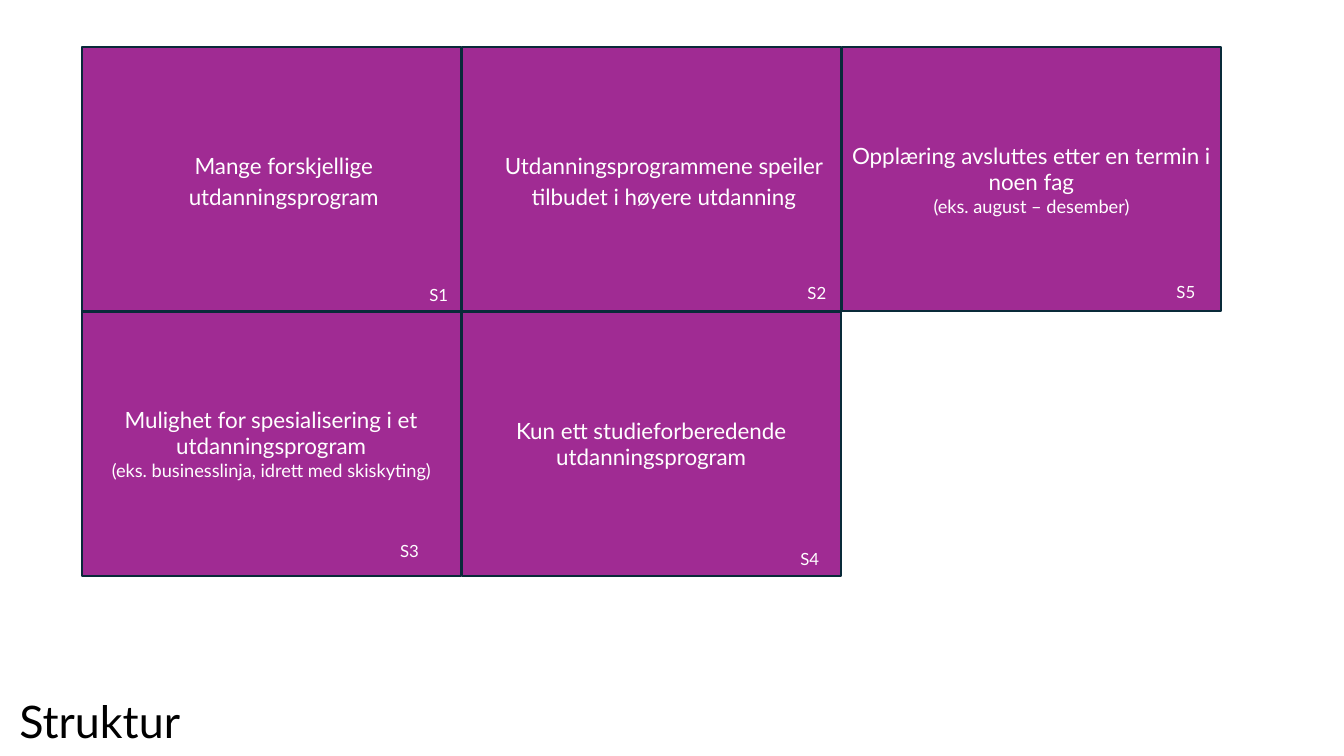
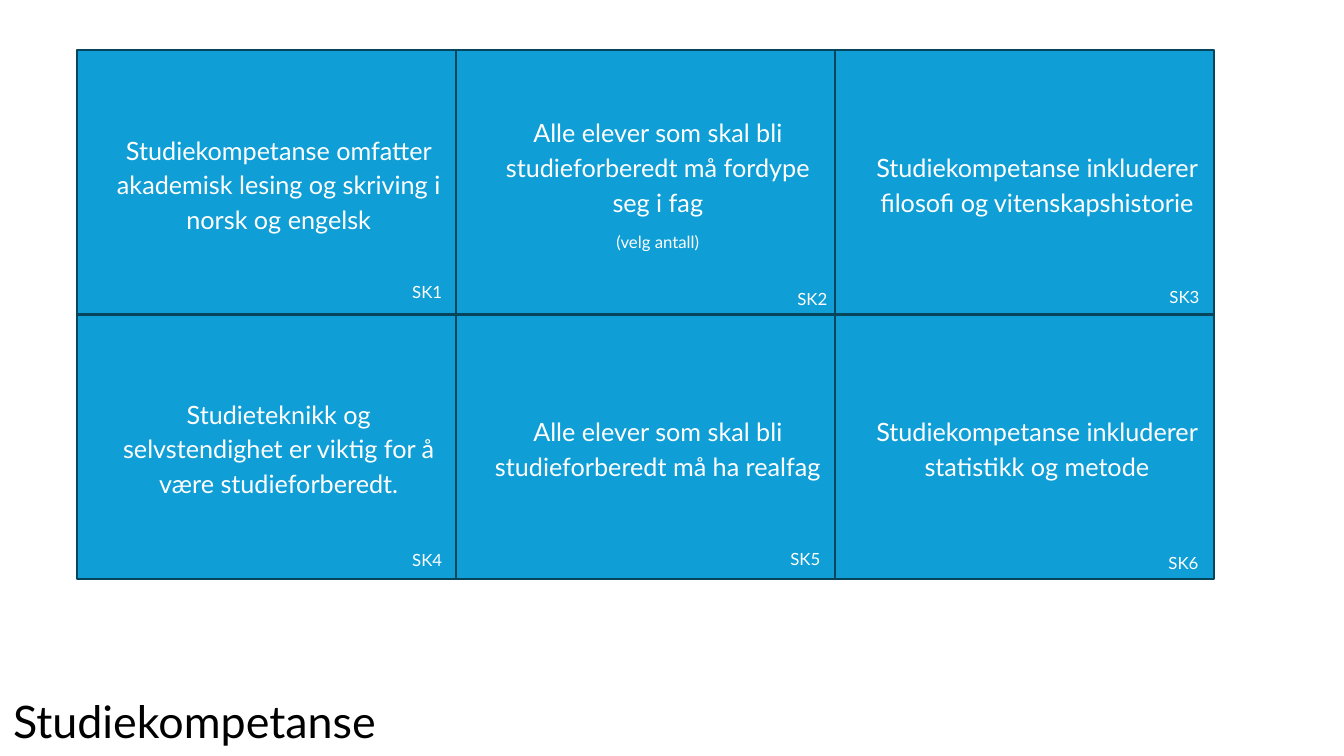
"""Builds two slides of topic cards, one on structure and one on study competence."""
from dataclasses import dataclass

from pptx import Presentation
from pptx import util as u
from pptx.dml.color import RGBColor
from pptx.enum import shapes, text

PX = 9144


@dataclass(frozen=True)
class Theme:
    """Colours, type sizes and card measures shared by the slides."""
    font: str = "Lato"
    ink: str = "000000"
    paper: str = "FFFFFF"
    purple: tuple = ("A02B93", "092A39")
    blue: tuple = ("0F9ED5", "07455D")
    title: int = 32
    large: int = 18
    medium: int = 16
    note: int = 13
    tag: int = 12
    border: float = 1.5
    card: tuple = (376, 262)
    tag_box: tuple = (58, 30)


THEME = Theme()
PLAIN = {"alignment": text.PP_ALIGN.CENTER}
SPACED = {**PLAIN, "line_spacing": 1.15, "space_after": u.Pt(8)}
INDENT = 25


def px(*lengths):
    """Turns px into EMU."""
    return [u.Emu(length * PX) for length in lengths]


def apply(target, values):
    """Sets each attribute named in values."""
    for name, value in values.items():
        setattr(target, name, value)


class Deck:
    """Holds the theme and the current slide, and draws each kind of element."""

    def __init__(self, theme):
        """Opens an empty widescreen presentation."""
        self.theme = theme
        self.show = Presentation()
        apply(self.show, dict(zip(("slide_width", "slide_height"), px(1333, 750))))

    def typeset(self, paragraph, words, size, colour, style, indent=0):
        """Fills one paragraph with formatted text."""
        if indent:
            paragraph._p.get_or_add_pPr().set("marL", str(indent * PX))
            paragraph._p.get_or_add_pPr().set("indent", "0")
        apply(paragraph, style)
        run = paragraph.add_run()
        run.text = words
        apply(run.font, {"name": self.theme.font, "size": u.Pt(size)})
        run.font.color.rgb = RGBColor.from_string(colour)

    def slide(self, heading, left, width):
        """Starts a slide with its heading at the bottom left."""
        self.current = self.show.slides.add_slide(self.show.slide_layouts[5])
        title = self.current.shapes.title
        apply(title, dict(zip(("left", "top", "width", "height"), px(left, 683, width, 64))))
        apply(title.text_frame, {
            "word_wrap": False,
            "auto_size": text.MSO_AUTO_SIZE.SHAPE_TO_FIT_TEXT,
            "vertical_anchor": text.MSO_ANCHOR.TOP,
        })
        self.typeset(title.text_frame.paragraphs[0], heading, self.theme.title,
                     self.theme.ink, PLAIN)

    def card(self, corner, colours, lines, spaced):
        """Draws a card and returns the group that holds it."""
        group = self.current.shapes.add_group_shape()
        box = group.shapes.add_shape(shapes.MSO_SHAPE.RECTANGLE,
                                     *px(*corner, *self.theme.card))
        box.shadow.inherit = False
        fill, border = map(RGBColor.from_string, colours)
        box.fill.solid()
        box.fill.fore_color.rgb = fill
        box.line.color.rgb = border
        box.line.width = u.Pt(self.theme.border)
        frame = box.text_frame
        apply(frame, {"word_wrap": True, "vertical_anchor": text.MSO_ANCHOR.MIDDLE})
        style, indent = (SPACED, INDENT) if spaced else (PLAIN, 0)
        for index, (words, size) in enumerate(lines):
            paragraph = frame.add_paragraph() if index else frame.paragraphs[0]
            self.typeset(paragraph, words, size, self.theme.paper, style, indent)
        return group

    def tag(self, group, corner, code):
        """Adds a card's code to its group."""
        label = group.shapes.add_textbox(*px(*corner, *self.theme.tag_box))
        apply(label.text_frame, {
            "word_wrap": True,
            "auto_size": text.MSO_AUTO_SIZE.SHAPE_TO_FIT_TEXT,
        })
        self.typeset(label.text_frame.paragraphs[0], code, self.theme.tag,
                     self.theme.paper, {})

    def grid(self, origin, pitch, colours, cards):
        """Places cards by column and row."""
        for code, (column, row), tag_corner, spaced, lines in cards:
            corner = (origin[0] + column * pitch[0], origin[1] + row * pitch[1])
            self.tag(self.card(corner, colours, lines, spaced), tag_corner, code)


STRUCTURE = [
    ("S1", (0, 0), (416, 278), True,
     [("Mange forskjellige utdanningsprogram", THEME.medium)]),
    ("S2", (1, 0), (791, 276), True,
     [("Utdanningsprogrammene speiler tilbudet i høyere utdanning", THEME.medium)]),
    ("S3", (0, 1), (387, 532), False,
     [("Mulighet for spesialisering i et utdanningsprogram", THEME.medium),
      ("(eks. businesslinja, idrett med skiskyting)", THEME.note)]),
    ("S4", (1, 1), (784, 539), False,
     [("Kun ett studieforberedende utdanningsprogram", THEME.medium)]),
    ("S5", (2, 0), (1157, 275), False,
     [("Opplæring avsluttes etter en termin i noen fag", THEME.medium),
      ("(eks. august – desember)", THEME.note)]),
]

COMPETENCE = [
    ("SK1", (0, 0), (399, 275), True,
     [("Studiekompetanse omfatter akademisk lesing og skriving i norsk og engelsk",
       THEME.large)]),
    ("SK2", (1, 0), (781, 282), True,
     [("Alle elever som skal bli studieforberedt må fordype seg i fag", THEME.large),
      ("(velg antall)", THEME.tag)]),
    ("SK3", (2, 0), (1150, 280), True,
     [("Studiekompetanse inkluderer filosofi og vitenskapshistorie", THEME.large)]),
    ("SK4", (0, 1), (399, 540), True,
     [("Studieteknikk og selvstendighet er viktig for å være studieforberedt.",
       THEME.large)]),
    ("SK6", (2, 1), (1149, 543), True,
     [("Studiekompetanse inkluderer statistikk og metode", THEME.large)]),
    ("SK5", (1, 1), (774, 539), True,
     [("Alle elever som skal bli studieforberedt må ha realfag", THEME.large)]),
]


def main():
    """Builds and saves the slides."""
    deck = Deck(THEME)
    deck.slide("Struktur", 9, 180)
    deck.grid((81, 47), (377, 262), THEME.purple, STRUCTURE)
    deck.slide("Studiekompetanse", 0, 386)
    deck.grid((76, 50), (376, 262), THEME.blue, COMPETENCE)
    deck.show.save("out.pptx")


if __name__ == "__main__":
    main()
